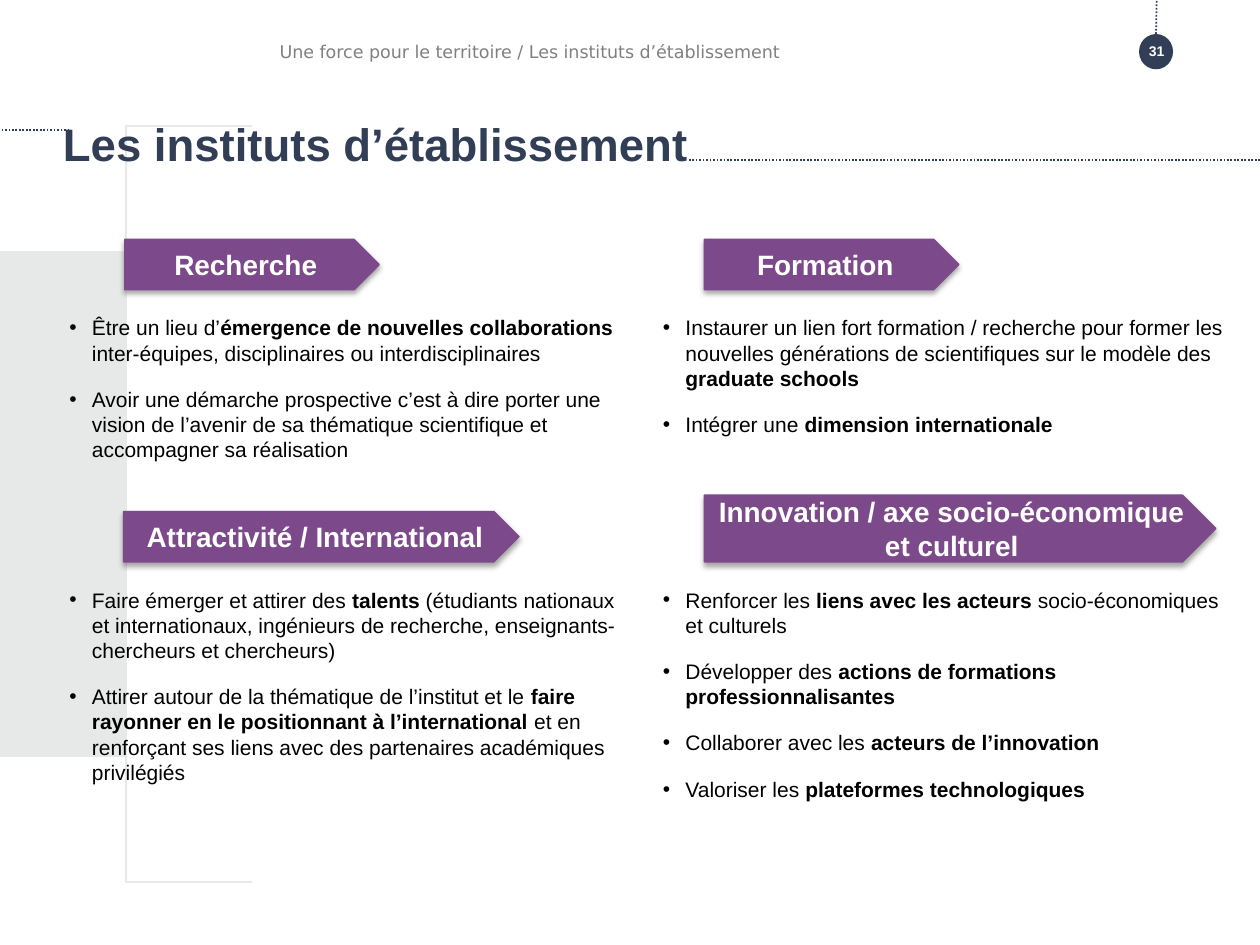
from dataclasses import dataclass

from lxml.etree import SubElement
from pptx import Presentation
from pptx.dml.color import RGBColor
from pptx.enum.dml import MSO_LINE
from pptx.enum.shapes import MSO_CONNECTOR, MSO_SHAPE as Shape
from pptx.enum.text import MSO_ANCHOR as Anchor, PP_ALIGN as Align
from pptx.oxml.ns import qn
from pptx.util import Emu, Inches, Pt

NAVY = RGBColor(0x31, 0x3E, 0x56)
PURPLE = RGBColor(0x7C, 0x4A, 0x8B)
PALE = RGBColor(0xE7, 0xE8, 0xE8)
GREY = RGBColor(0x80, 0x80, 0x80)
BLACK = RGBColor(0, 0, 0)
WHITE = RGBColor(0xFF, 0xFF, 0xFF)

CELL = Inches(0.1)
COLS, ROWS = 100, 75
LEFT, RIGHT = 5.3, 52.4
UPPER, LOWER = 25, 46.6
TAG_LEFT, TAG_RIGHT = 9.9, 55.9
CRESCENT_AXIS = 4.04

OUTER = [(1.65, 0.9), (1.64, 0.86), (1.55, 0.82), (1.47, 0.81), (1.36, 0.86),
         (1.25, 0.97), (1.13, 1.13), (0.99, 1.34), (0.82, 1.62), (0.69, 1.88),
         (0.57, 2.14), (0.46, 2.4), (0.39, 2.61), (0.32, 2.88), (0.27, 3.1),
         (0.22, 3.37), (0.19, 3.65), (0.18, 3.9)]
INNER = [(0.83, 3.93), (0.84, 3.75), (0.87, 3.34), (0.91, 3.11), (0.97, 2.78),
         (1.03, 2.52), (1.11, 2.25), (1.2, 1.97), (1.28, 1.75), (1.37, 1.53),
         (1.47, 1.31), (1.58, 1.07), (1.64, 0.93)]


@dataclass(frozen=True)
class Box:
    left: float
    top: float
    width: float
    height: float

    def emu(self) -> list[Emu]:
        return [cells(n) for n in (self.left, self.top, self.width, self.height)]


@dataclass(frozen=True)
class Run:
    text: str
    bold: bool = False


@dataclass(frozen=True)
class Style:
    size: int
    color: RGBColor
    bold: bool = False
    font: str = "Arial"


@dataclass(frozen=True)
class Section:
    title: str
    tag: Box
    body: Box
    points: list[list[Run]]


TITLE = Style(26, NAVY, True)
HEADER = Style(10, GREY, font="DejaVu Sans")
NUMBER = Style(8, WHITE, True)
TAG = Style(16, WHITE, True)
BODY = Style(12, BLACK)

SECTIONS = [
    Section("Recherche", Box(TAG_LEFT, 19, 20.2, 4), Box(LEFT, UPPER, 46, 9), [
        [Run("Être un lieu d’"), Run("émergence de nouvelles collaborations ", True),
         Run("inter-équipes, disciplinaires ou interdisciplinaires")],
        [Run("Avoir une démarche prospective c’est à dire porter une vision de l’avenir "
             "de sa thématique scientifique et accompagner sa réalisation")]]),
    Section("Formation", Box(TAG_RIGHT, 19, 20.2, 4), Box(RIGHT, UPPER, 45.1, 8.5), [
        [Run("Instaurer un lien fort formation / recherche pour former les nouvelles "
             "générations de scientifiques sur le modèle des "),
         Run("graduate schools", True)],
        [Run("Intégrer une "), Run("dimension internationale", True)]]),
    Section("Attractivité / International", Box(9.8, 40.6, 31.4, 4),
            Box(LEFT, LOWER, 45, 19.8), [
        [Run("Faire émerger et attirer des "), Run("talents", True),
         Run(" (étudiants nationaux et internationaux, ingénieurs de recherche, "
             "enseignants-chercheurs et chercheurs)")],
        [Run("Attirer autour de la thématique de l’institut et le "),
         Run("faire rayonner en le positionnant à l’international ", True),
         Run("et en renforçant ses liens avec des partenaires académiques privilégiés")]]),
    Section("Innovation / axe socio-économique et culturel",
            Box(TAG_RIGHT, 39.3, 40.6, 5.3), Box(RIGHT, LOWER, 45.1, 19.8), [
        [Run("Renforcer les "), Run("liens avec les acteurs", True),
         Run(" socio-économiques et culturels")],
        [Run("Développer des "),
         Run("actions de formations professionnalisantes", True)],
        [Run("Collaborer avec les "), Run("acteurs de l’innovation", True)],
        [Run("Valoriser les "), Run("plateformes technologiques", True)]]),
]


def cells(n: float) -> Emu:
    """Turn a count of grid cells into a length."""
    return Emu(round(n * CELL))


def add_run(p, run: Run, style: Style) -> None:
    """Append one styled run to a paragraph."""
    r = p.add_run()
    r.text = run.text
    r.font.name, r.font.size = style.font, Pt(style.size)
    r.font.bold = run.bold or style.bold
    r.font.color.rgb = style.color


def add_text(s, box: Box, style: Style, text: str = "", inset: bool = True,
             anchor=Anchor.MIDDLE, align=Align.LEFT):
    """Add a wrapping text box and return its text frame."""
    tf = s.shapes.add_textbox(*box.emu()).text_frame
    tf.word_wrap, tf.vertical_anchor = True, anchor
    if not inset:
        tf.margin_left = tf.margin_right = tf.margin_top = tf.margin_bottom = 0
    p = tf.paragraphs[0]
    p.alignment = align
    if text:
        add_run(p, Run(text), style)
    return tf


def add_bullets(s, box: Box, points: list[list[Run]]) -> None:
    """Add a bulleted list with even paragraph gaps."""
    tf = add_text(s, box, BODY, inset=False, anchor=Anchor.TOP)
    for i, runs in enumerate(points):
        p = tf.add_paragraph() if i else tf.paragraphs[0]
        pPr = p._p.get_or_add_pPr()
        pPr.set("marL", str(Inches(0.2)))
        pPr.set("indent", str(Inches(-0.18)))
        SubElement(pPr, qn("a:buFont"), typeface="Arial")
        SubElement(pPr, qn("a:buChar"), char="•")
        p.space_before, p.space_after = Pt(6 if i else 0), Pt(6)
        for run in runs:
            add_run(p, run, BODY)


def add_tag(s, box: Box, text: str) -> None:
    """Add a purple pentagon heading with a soft drop shadow."""
    sp = s.shapes.add_shape(Shape.PENTAGON, *box.emu())
    sp.shadow.inherit = False
    sp.fill.solid()
    sp.fill.fore_color.rgb = sp.line.color.rgb = PURPLE
    sp.line.width = Pt(0.75)
    effects = sp._element.spPr.find(qn("a:effectLst"))
    shadow = SubElement(effects, qn("a:outerShdw"), blurRad=str(Pt(3.1)),
                        dist=str(Pt(1.8)), dir="5400000", rotWithShape="0")
    black = SubElement(shadow, qn("a:srgbClr"), val=str(BLACK))
    SubElement(black, qn("a:alpha"), val="35000")
    tf = sp.text_frame
    tf.word_wrap, tf.vertical_anchor = True, Anchor.MIDDLE
    p = tf.paragraphs[0]
    p.alignment = Align.CENTER
    add_run(p, Run(text), TAG)


def add_dotted(s, x1: float, y1: float, x2: float, y2: float):
    """Add a dotted navy line between two grid points."""
    line = s.shapes.add_connector(MSO_CONNECTOR.STRAIGHT, *map(cells, (x1, y1, x2, y2)))
    line.line.color.rgb, line.line.width = NAVY, Pt(1)
    line.line.dash_style = MSO_LINE.ROUND_DOT
    SubElement(line._element.spPr, qn("a:effectLst"))
    return line


def add_crescent(s) -> None:
    """Add the pale crescent, mirrored about its horizontal axis."""
    def mirror(points):
        return [(x, 2 * CRESCENT_AXIS - y) for x, y in reversed(points)]

    points = OUTER + mirror(OUTER) + mirror(INNER) + INNER
    fb = s.shapes.build_freeform(*points[0], scale=Inches(1))
    fb.add_line_segments(points[1:], close=True)
    sp = fb.convert_to_shape()
    sp.shadow.inherit = False
    sp.fill.solid()
    sp.fill.fore_color.rgb = sp.line.color.rgb = PALE
    sp.line.width = Pt(0.75)


def main() -> None:
    """Build the slide and save it."""
    prs = Presentation()
    prs.slide_width, prs.slide_height = cells(COLS), cells(ROWS)
    s = prs.slides.add_slide(prs.slide_layouts[6])
    add_crescent(s)
    badge = s.shapes.add_shape(Shape.OVAL, *Box(90.4, 2.7, 2.7, 2.8).emu())
    badge.shadow.inherit = False
    badge.fill.solid()
    badge.fill.fore_color.rgb = NAVY
    badge.line.fill.background()
    add_dotted(s, 91.8, 2.8, 91.8, 0).begin_connect(badge, 0)
    add_text(s, Box(5, 9.2, 90, 7), TITLE, "Les instituts d’établissement",
             inset=False, anchor=Anchor.TOP)
    add_text(s, Box(89.3, 3.3, 5, 1.5), NUMBER, "31", align=Align.CENTER)
    add_dotted(s, COLS, 12.7, 54.6, 12.7)
    add_dotted(s, 5.5, 10.3, 0, 10.3)
    for section in SECTIONS:
        add_bullets(s, section.body, section.points)
        add_tag(s, section.tag, section.title)
    add_text(s, Box(21.2, 1.9, 66.2, 4.4), HEADER,
             "Une force pour le territoire / Les instituts d’établissement")
    prs.save("out.pptx")


if __name__ == "__main__":
    main()
